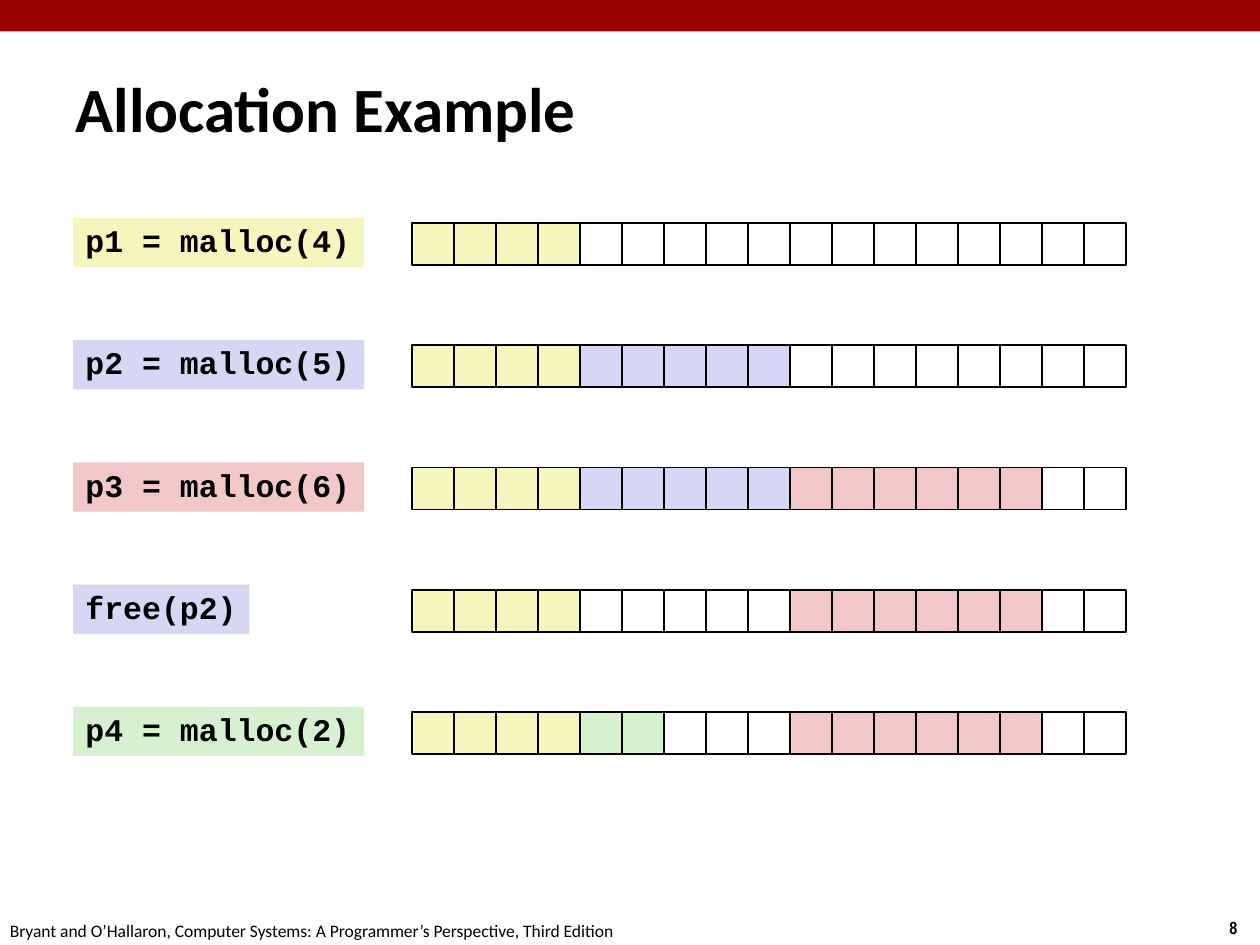
import pptx
import pptx.dml.color
import pptx.enum.shapes
import pptx.enum.text
import pptx.util

RGBColor = pptx.dml.color.RGBColor
RECTANGLE = pptx.enum.shapes.MSO_SHAPE.RECTANGLE
ALIGN = pptx.enum.text.PP_ALIGN
ANCHOR = pptx.enum.text.MSO_ANCHOR
AUTO_SIZE = pptx.enum.text.MSO_AUTO_SIZE
Inches = pptx.util.Inches
Pt = pptx.util.Pt

BLACK = RGBColor(0x00, 0x00, 0x00)
WHITE = RGBColor(0xFF, 0xFF, 0xFF)
BAR_RED = RGBColor(0x99, 0x00, 0x00)
YELLOW = RGBColor(0xF6, 0xF5, 0xBD)
BLUE = RGBColor(0xD6, 0xD6, 0xF5)
PINK = RGBColor(0xF1, 0xC7, 0xC7)
GREEN = RGBColor(0xD5, 0xF1, 0xCF)

SLIDE_WIDTH, SLIDE_HEIGHT = 10, 7.5
CELL = 1 / 3
CELL_COUNT = 17
ROW_TOP, ROW_PITCH = 1.73, 0.97
LABEL_LEFT, LABEL_HEIGHT = 0.58, 0.39
CALL_WIDTH, FREE_WIDTH = 2.31, 1.4
HEAP_LEFT, HEAP_OFFSET = 3.27, 0.04

# Each step: code, label colour, label width, runs of (colour, cells) in the heap
STEPS = [
    ("p1 = malloc(4)", YELLOW, CALL_WIDTH, [(YELLOW, 4)]),
    ("p2 = malloc(5)", BLUE, CALL_WIDTH, [(YELLOW, 4), (BLUE, 5)]),
    ("p3 = malloc(6)", PINK, CALL_WIDTH, [(YELLOW, 4), (BLUE, 5), (PINK, 6)]),
    ("free(p2)", BLUE, FREE_WIDTH, [(YELLOW, 4), (WHITE, 5), (PINK, 6)]),
    ("p4 = malloc(2)", GREEN, CALL_WIDTH,
     [(YELLOW, 4), (GREEN, 2), (WHITE, 3), (PINK, 6)]),
]


def add_rectangle(shapes, box, fill, outline=None):
    rectangle = shapes.add_shape(RECTANGLE, *map(Inches, box))
    rectangle.shadow.inherit = False
    rectangle.fill.solid()
    rectangle.fill.fore_color.rgb = fill
    if outline is None:
        rectangle.line.fill.background()
    else:
        rectangle.line.color.rgb = outline
        rectangle.line.width = Pt(1)
    return rectangle


def write_line(shape, text, font_name, size, bold):
    para = shape.text_frame.paragraphs[0]
    para.text = text
    para.alignment = ALIGN.LEFT
    para.font.name = font_name
    para.font.size = Pt(size)
    para.font.bold = bold
    para.font.color.rgb = BLACK
    return para


def add_title(page, box, text):
    title = page.shapes.title
    title.left, title.top, title.width, title.height = map(Inches, box)
    title.text_frame.vertical_anchor = ANCHOR.MIDDLE
    title.text_frame.auto_size = AUTO_SIZE.NONE
    write_line(title, text, "Calibri", 36, True)


def add_small_text(page, box, text, font_name, bold):
    note = page.shapes.add_textbox(*map(Inches, box))
    note.text_frame.word_wrap = False
    note.text_frame.auto_size = AUTO_SIZE.SHAPE_TO_FIT_TEXT
    write_line(note, text, font_name, 10, bold)


def add_label(page, box, code, colour):
    label = add_rectangle(page.shapes, box, colour)
    label.text_frame.word_wrap = False
    label.text_frame.auto_size = AUTO_SIZE.SHAPE_TO_FIT_TEXT
    label.text_frame.vertical_anchor = ANCHOR.TOP
    para = write_line(label, code, "Courier New", 18, True)
    para.line_spacing = 0.94


def add_heap(page, left, top, blocks):
    colours = [colour for colour, count in blocks for _ in range(count)]
    colours += [WHITE] * (CELL_COUNT - len(colours))
    heap = page.shapes.add_group_shape()
    for column, colour in enumerate(colours):
        box = (left + column * CELL, top, CELL, CELL)
        add_rectangle(heap.shapes, box, colour, BLACK)


def main():
    deck = pptx.Presentation()
    deck.slide_width = Inches(SLIDE_WIDTH)
    deck.slide_height = Inches(SLIDE_HEIGHT)
    page = deck.slides.add_slide(deck.slide_layouts[5])

    # Frame: top bar, page number, footer and title
    add_rectangle(page.shapes, (0, 0, SLIDE_WIDTH, 0.25), BAR_RED)
    add_small_text(page, (9.66, 7.23, 0.34, 0.27), "8", "Arial Narrow", True)
    add_small_text(
        page, (-0.02, 7.25, 5.08, 0.27),
        "Bryant and O’Hallaron, Computer Systems: "
        "A Programmer’s Perspective, Third Edition",
        "Calibri", False)
    add_title(page, (0.5, 0.54, 7.07, 0.63), "Allocation Example")

    # One row for each allocation step
    for row, (code, colour, width, blocks) in enumerate(STEPS):
        top = ROW_TOP + row * ROW_PITCH
        add_heap(page, HEAP_LEFT, top + HEAP_OFFSET, blocks)
        add_label(page, (LABEL_LEFT, top, width, LABEL_HEIGHT), code, colour)

    deck.save("out.pptx")


if __name__ == "__main__":
    main()
